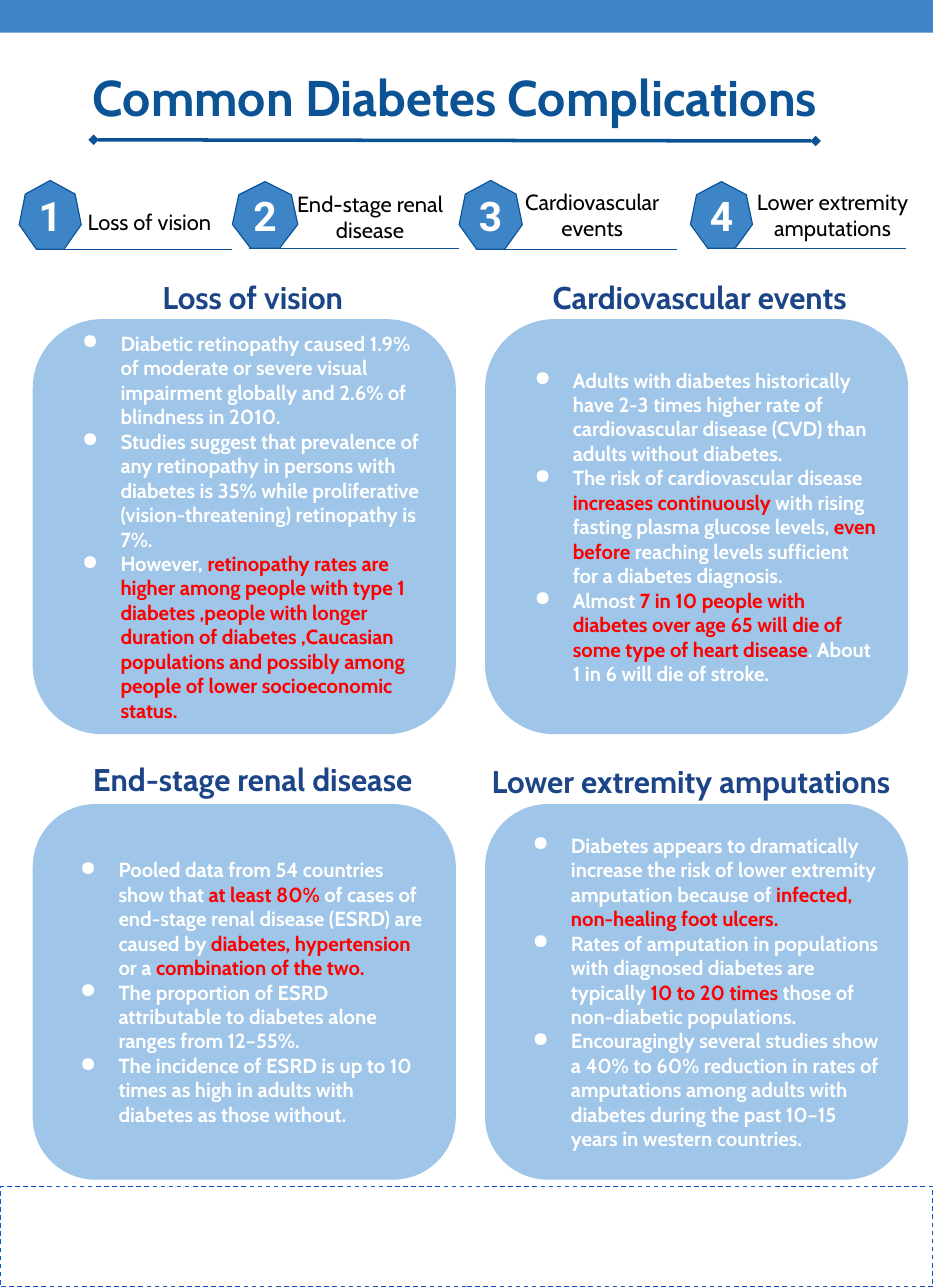
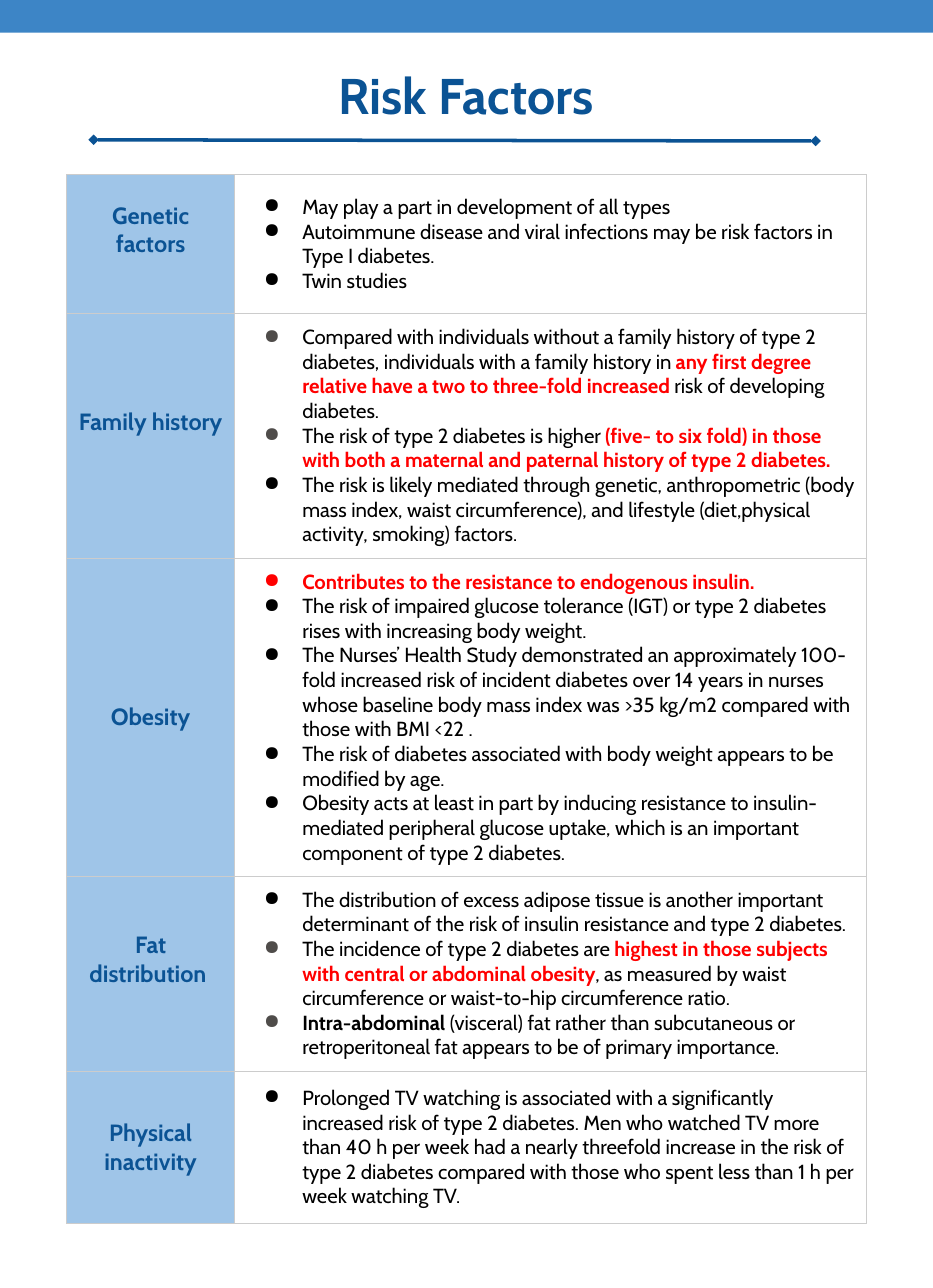
from lxml import etree
from pptx import Presentation
from pptx.dml.color import RGBColor
from pptx.enum import dml, shapes, text
from pptx.oxml.ns import qn
from pptx.util import Inches, Pt

THEME = {
    "font": "Cabin", "digit": "Roboto",
    "band": "3D85C6", "deep": "0B5394", "head": "1C4587", "panel": "9FC5E8",
    "dash": "1155CC", "grid": "CCCCCC", "white": "FFFFFF", "black": "000000",
    "grey": "4F4C4A", "alert": "FF0000",
    "title": 32, "number": 26, "section": 20, "row": 15, "label": 14, "body": 13,
}
KIND = shapes.MSO_SHAPE
LEFT, CENTER = text.PP_ALIGN.LEFT, text.PP_ALIGN.CENTER


def put(slide, kind, box, fill=None, edge=None, inset=0.1):
    """Add a preset shape, or a text box when kind is None."""
    place = [Inches(n) for n in box]
    if kind is None:
        shape = slide.shapes.add_textbox(*place)
    else:
        shape = slide.shapes.add_shape(kind, *place)
        shape.shadow.inherit = False
        if fill:
            shape.fill.solid()
            shape.fill.fore_color.rgb = RGBColor.from_string(THEME[fill])
        else:
            shape.fill.background()
        if edge:
            shape.line.color.rgb = RGBColor.from_string(THEME[edge])
            shape.line.width = Pt(0.75)
        else:
            shape.line.fill.background()
        shape.text_frame.vertical_anchor = text.MSO_ANCHOR.MIDDLE
    frame = shape.text_frame
    frame.word_wrap = True
    frame.margin_left = frame.margin_right = Inches(inset)
    frame.margin_top = frame.margin_bottom = Inches(inset)
    return shape


def write(frame, items, size, ink, bold=True, align=CENTER, font="font", bullet=False):
    """Fill a frame; *...* marks accents, an item may be (text, dot, accent)."""
    for i, item in enumerate(items):
        line, dot, accent = (item, ink, "alert") if isinstance(item, str) else item
        para = frame.paragraphs[0] if i == 0 else frame.add_paragraph()
        para.alignment = align
        if bullet:
            props = para._p.get_or_add_pPr()
            props.set("marL", str(Inches(0.5)))
            props.set("indent", str(Inches(-0.34)))
            tint = etree.SubElement(props, qn("a:buClr"))
            etree.SubElement(tint, qn("a:srgbClr"), val=THEME[dot])
            etree.SubElement(props, qn("a:buChar"), char="●")
        para.font.name = THEME[font]
        para.font.size = Pt(THEME[size])
        para.font.bold = bold
        para.font.color.rgb = RGBColor.from_string(THEME[ink])
        for j, part in enumerate(line.split("*")):
            if part:
                run = para.add_run()
                run.text = part
                if j % 2:
                    run.font.bold = True
                    run.font.color.rgb = RGBColor.from_string(THEME[accent])


deck = Presentation()
deck.slide_width, deck.slide_height = Inches(8.27), Inches(11.42)

# Shared band, title and rule
titles = [
    ("Common Diabetes Complications", (0.65, 0.46, 6.77, 0.79)),
    ("Risk Factors", (0.83, 0.44, 6.61, 0.79)),
]
for title, box in titles:
    slide = deck.slides.add_slide(deck.slide_layouts[6])
    put(slide, KIND.RECTANGLE, (0, 0, 8.27, 0.29), "band")
    write(put(slide, None, box, inset=0.13).text_frame, [title], "title", "deep")
    rule = slide.shapes.add_connector(
        shapes.MSO_CONNECTOR.STRAIGHT, Inches(0.83), Inches(1.24), Inches(7.23), Inches(1.25))
    rule.line.width = Pt(2.25)
    rule.line.color.rgb = RGBColor.from_string(THEME["deep"])
    stroke = rule.line._get_or_add_ln()
    for end in ("a:headEnd", "a:tailEnd"):
        etree.SubElement(stroke, qn(end), type="diamond")
first, second = deck.slides

# Complications: numbered badges
foot = put(first, KIND.RECTANGLE, (0, 10.52, 8.27, 0.89), edge="dash")
foot.line.dash_style = dml.MSO_LINE.DASH
badges = [
    ("Loss of vision", (0.17, 1.6, 0.55, 0.61), 2.06, (0.53, 1.75, 1.59, 0.43)),
    ("End-stage renal disease", (2.06, 1.61, 0.58, 0.59), 4.07, (2.37, 1.59, 1.82, 0.64)),
    ("Cardiovascular events", (4.07, 1.6, 0.56, 0.61), 6, (4.45, 1.57, 1.6, 0.43)),
    ("Lower extremity amputations", (6.12, 1.61, 0.55, 0.59), 8.03, (6.56, 1.57, 1.64, 0.42)),
]
for number, (label, box, end, spot) in enumerate(badges, 1):
    base = Inches(box[1] + box[3])
    rule = first.shapes.add_connector(
        shapes.MSO_CONNECTOR.STRAIGHT, Inches(box[0] + 0.15), base, Inches(end), base)
    rule.line.width = Pt(0.75)
    rule.line.color.rgb = RGBColor.from_string(THEME["deep"])
    badge = put(first, KIND.HEPTAGON, box, "band", "deep")
    write(badge.text_frame, [str(number)], "number", "white", font="digit")
    write(put(first, None, spot).text_frame, [label], "label", "black", bold=False)

# Complications: panels with headings
panels = [
    ("Loss of vision", (0.44, 2.37, 3.6, 0.59), CENTER, (0.29, 2.83, 3.75, 3.68), [
        "Diabetic retinopathy caused 1.9% of moderate or severe visual impairment globally "
        "and 2.6% of blindness in 2010.",
        "Studies suggest that prevalence of any retinopathy in persons with diabetes is 35% "
        "while proliferative (vision-threatening) retinopathy is 7%.",
        "However, *retinopathy rates are higher among people with type 1 diabetes ,people with "
        "longer duration of diabetes ,Caucasian populations and possibly among people of lower "
        "socioeconomic status.*",
    ]),
    ("End-stage renal disease", (0.44, 6.64, 3.6, 0.64), CENTER, (0.29, 7.13, 3.75, 3.33), [
        "Pooled data from 54 countries show that *at least 80% *of cases of end-stage renal "
        "disease (ESRD) are caused by *diabetes, hypertension* or a *combination of the two.*",
        "The proportion of ESRD attributable to diabetes alone ranges from 12–55%.",
        "The incidence of ESRD is up to 10 times as high in adults with diabetes as those "
        "without.",
    ]),
    ("Cardiovascular events", (4.8, 2.37, 2.82, 0.68), LEFT, (4.3, 2.83, 3.75, 3.68), [
        "Adults with diabetes historically have 2-3 times higher rate of cardiovascular "
        "disease (CVD) than adults without diabetes.",
        "The risk of cardiovascular disease *increases continuously* with rising fasting "
        "plasma glucose levels,* even before* reaching levels sufficient for a diabetes "
        "diagnosis.",
        "Almost *7 in 10 people with diabetes over age 65 will die of some type of heart "
        "disease*. About 1 in 6 will die of stroke.",
    ]),
    ("Lower extremity amputations", (4.26, 6.66, 3.9, 0.59), LEFT, (4.3, 7.13, 3.75, 3.33), [
        "Diabetes appears to dramatically increase the risk of lower extremity amputation "
        "because of *infected, non-healing foot ulcers.*",
        "Rates of amputation in populations with diagnosed diabetes are typically *10 to 20 "
        "times* those of non-diabetic populations.",
        "Encouragingly several studies show a 40% to 60% reduction in rates of amputations "
        "among adults with diabetes during the past 10–15 years in western countries.",
    ]),
]
for heading, spot, align, box, points in panels:
    write(put(first, None, spot).text_frame, [heading], "section", "head", align=align)
    panel = put(first, KIND.ROUNDED_RECTANGLE, box, "panel")
    write(panel.text_frame, points, "body", "white", align=LEFT, bullet=True)

# Risk factors: heading, row height, extra space under the heading, points
factors = [
    ("Genetic factors", 1.23, 0.25, [
        "May play a part in development of all types",
        "Autoimmune disease and viral infections may be risk factors in Type I diabetes.",
        "Twin studies",
    ]),
    ("Family history", 2.17, 0.25, [
        ("Compared with individuals without a family history of type 2 diabetes, individuals "
         "with a family history in *any first degree relative have a two to three-fold "
         "increased *risk of developing diabetes.", "grey", "alert"),
        ("The risk of type 2 diabetes is higher *(five- to six fold) in those with both a "
         "maternal and paternal history of type 2 diabetes.*", "grey", "alert"),
        "The risk is likely mediated through genetic, anthropometric (body mass index, waist "
        "circumference), and lifestyle (diet,physical activity, smoking) factors.",
    ]),
    ("Obesity", 2.82, 0, [
        ("*Contributes to the resistance to endogenous insulin.*", "alert", "alert"),
        "The risk of impaired glucose tolerance (IGT) or type 2 diabetes rises with "
        "increasing body weight.",
        "The Nurses’ Health Study demonstrated an approximately 100-fold increased risk of "
        "incident diabetes over 14 years in nurses whose baseline body mass index was "
        ">35 kg/m2 compared with those with BMI <22 .",
        "The risk of diabetes associated with body weight appears to be modified by age.",
        "Obesity acts at least in part by inducing resistance to insulin-mediated peripheral "
        "glucose uptake, which is an important component of type 2 diabetes.",
    ]),
    ("Fat distribution ", 1.73, 0.25, [
        "The distribution of excess adipose tissue is another important determinant of the "
        "risk of insulin resistance and type 2 diabetes.",
        ("The incidence of type 2 diabetes are *highest in those subjects with central or "
         "abdominal obesity*, as measured by waist circumference or waist-to-hip "
         "circumference ratio.", "grey", "alert"),
        ("*Intra-abdominal* (visceral) fat rather than subcutaneous or retroperitoneal fat "
         "appears to be of primary importance.", "grey", "black"),
    ]),
    ("Physical inactivity", 1.35, 0, [
        "Prolonged TV watching is associated with a significantly increased risk of type 2 "
        "diabetes. Men who watched TV more than 40 h per week had a nearly threefold increase "
        "in the risk of type 2 diabetes compared with those who spent less than 1 h per week "
        "watching TV.",
    ]),
]
widths = (1.49, 5.6)
height = sum(factor[1] for factor in factors)
table = second.shapes.add_table(
    len(factors), 2, Inches(0.59), Inches(1.55), Inches(sum(widths)), Inches(height)).table
table.first_row = table.horz_banding = False
for column, width in zip(table.columns, widths):
    column.width = Inches(width)
for row, (name, tall, lift, points) in zip(table.rows, factors):
    row.height = Inches(tall)
    for cell in row.cells:
        cell.vertical_anchor = text.MSO_ANCHOR.MIDDLE
        cell.margin_left = cell.margin_right = Inches(0.1)
        cell.margin_top = cell.margin_bottom = Inches(0.1)
        props = cell._tc.get_or_add_tcPr()
        for side in ("a:lnL", "a:lnR", "a:lnT", "a:lnB"):
            edge = etree.SubElement(props, qn(side), w=str(Pt(0.75)))
            paint = etree.SubElement(edge, qn("a:solidFill"))
            etree.SubElement(paint, qn("a:srgbClr"), val=THEME["grid"])
    side, main = row.cells
    side.margin_bottom = Inches(0.1 + lift)
    side.fill.solid()
    side.fill.fore_color.rgb = RGBColor.from_string(THEME["panel"])
    main.fill.background()
    write(side.text_frame, [name], "row", "deep")
    write(main.text_frame, points, "body", "black", bold=False, align=LEFT, bullet=True)

# Connectors carry no shadow
for slide in deck.slides:
    for props in slide.shapes._spTree.iterfind(qn("p:cxnSp") + "/" + qn("p:spPr")):
        etree.SubElement(props, qn("a:effectLst"))

deck.save("out.pptx")
